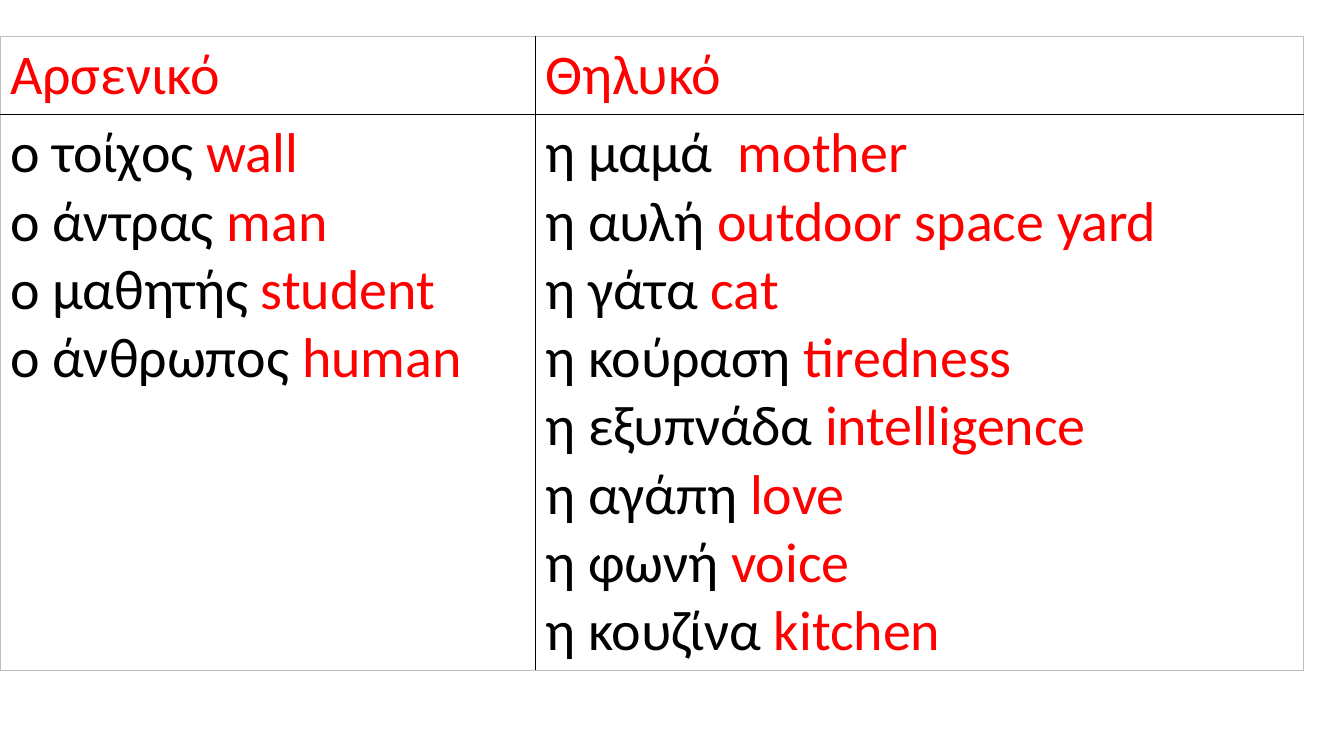
from pptx import Presentation
from pptx.dml.color import RGBColor
from pptx.oxml.ns import qn
from pptx.util import Inches, Pt
from lxml import etree

BLACK, RED, WHITE, GREY = "000000", "FF0000", "FFFFFF", "BFBFBF"
COLUMN_WIDTHS = (5.31, 7.62)
ROW_HEIGHTS = (0.74, 5.26)
TEXT_FORMAT = {"name": "Calibri", "size": Pt(40), "bold": False}

# Heading of each gender, then its nouns with their meanings
GENDERS = [
    ("Αρσενικό", [
        ("ο τοίχος ", "wall"),
        ("ο άντρας ", "man"),
        ("ο μαθητής ", "student"),
        ("ο άνθρωπος ", "human"),
    ]),
    ("Θηλυκό", [
        ("η μαμά  ", "mother"),
        ("η αυλή ", "outdoor space yard"),
        ("η γάτα ", "cat"),
        ("η κούραση ", "tiredness"),
        ("η εξυπνάδα ", "intelligence"),
        ("η αγάπη ", "love"),
        ("η φωνή ", "voice"),
        ("η κουζίνα ", "kitchen"),
    ]),
]


def color(value):
    return RGBColor.from_string(value)


def add_span(para, text, value):
    span = para.add_run()
    span.text = text
    for name, setting in TEXT_FORMAT.items():
        setattr(span.font, name, setting)
    span.font.color.rgb = color(value)


def add_border(cell, side, value, width):
    line = etree.SubElement(cell._tc.get_or_add_tcPr(), qn(f"a:ln{side}"), w=str(Pt(width)))
    fill = etree.SubElement(line, qn("a:solidFill"))
    etree.SubElement(fill, qn("a:srgbClr"), val=value)


def style_cell(cell, row, column):
    # Black rules between cells, a thin grey frame around the table
    inner_sides = {"R" if column == 0 else "L", "B" if row == 0 else "T"}
    for side in "LRTB":
        if side in inner_sides:
            add_border(cell, side, BLACK, 1)
        else:
            add_border(cell, side, GREY, 0.5)
    cell.fill.solid()
    cell.fill.fore_color.rgb = color(WHITE)


def fill_nouns(cell, nouns):
    frame = cell.text_frame
    for index, (noun, meaning) in enumerate(nouns):
        para = frame.add_paragraph() if index else frame.paragraphs[0]
        add_span(para, noun, BLACK)
        add_span(para, meaning, RED)


def add_gender_table(page):
    table = page.shapes.add_table(
        len(ROW_HEIGHTS), len(COLUMN_WIDTHS), Inches(0), Inches(0.36),
        Inches(sum(COLUMN_WIDTHS)), Inches(sum(ROW_HEIGHTS))).table
    table.first_row = table.horz_banding = False
    for row, height in zip(table.rows, ROW_HEIGHTS):
        row.height = Inches(height)
    for index, (heading, nouns) in enumerate(GENDERS):
        table.columns[index].width = Inches(COLUMN_WIDTHS[index])
        for row in range(len(ROW_HEIGHTS)):
            style_cell(table.cell(row, index), row, index)
        add_span(table.cell(0, index).text_frame.paragraphs[0], heading, RED)
        fill_nouns(table.cell(1, index), nouns)


def main():
    deck = Presentation()
    deck.slide_width, deck.slide_height = Inches(13.33), Inches(7.5)
    page = deck.slides.add_slide(deck.slide_layouts[6])
    add_gender_table(page)
    deck.save("out.pptx")


if __name__ == "__main__":
    main()
